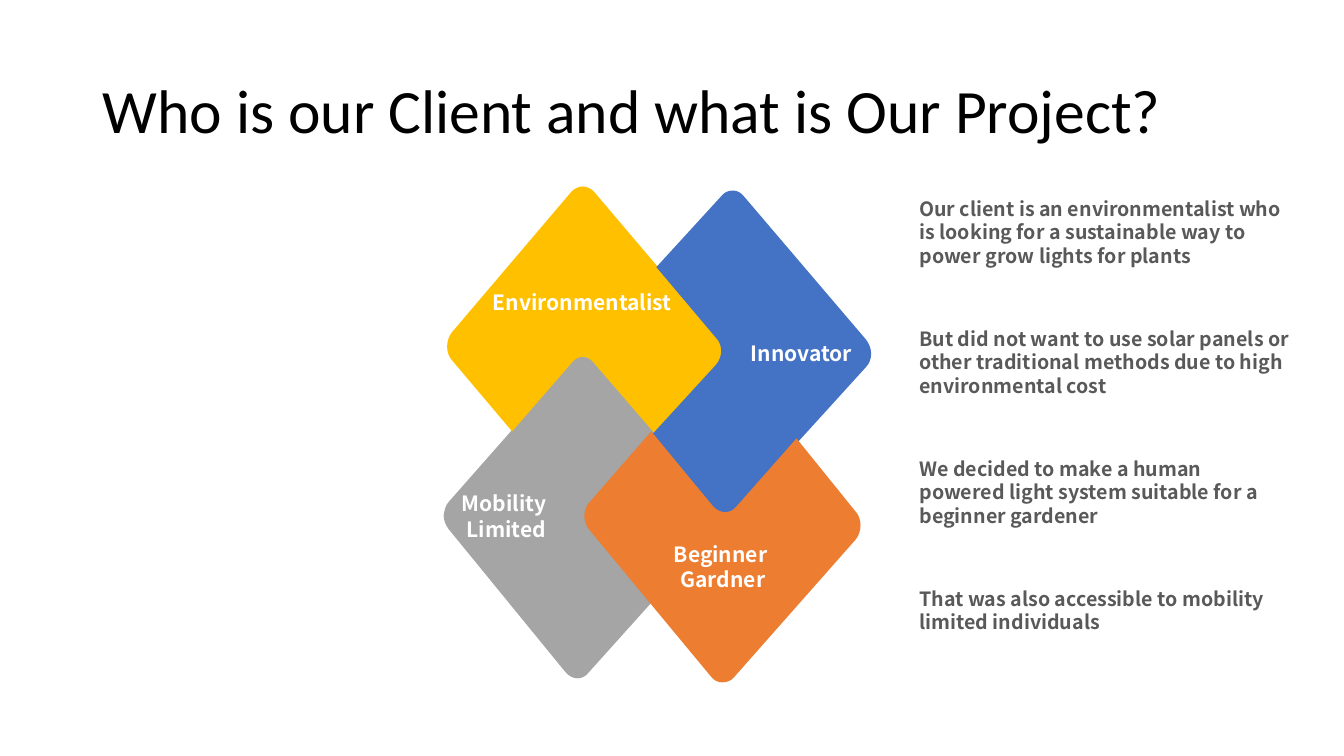
"""Builds a slide of four interlocking diamonds that describe the client and the project."""
from lxml.etree import SubElement
from pptx import Presentation
from pptx.dml.color import RGBColor
from pptx.enum.text import MSO_ANCHOR as Anchor, MSO_AUTO_SIZE as AutoSize, PP_ALIGN as Align
from pptx.oxml.ns import qn
from pptx.util import Inches, Pt

COLORS = {
    "title": "000000", "label": "FFFFFF", "caption": "595959",
    "gray": "A5A5A5", "gold": "FFC000", "blue": "4472C4", "orange": "ED7D31",
}
BODY_FONT = "Noto Sans CJK SC"
UNITS = 100


def write(frame, text, size, color, font=BODY_FONT, bold=True, align=Align.LEFT,
          anchor=Anchor.TOP, insets=(0.1, 0.05, 0.1, 0.05), spacing=None):
    frame.word_wrap = True
    frame.vertical_anchor = anchor
    frame.margin_left, frame.margin_top, frame.margin_right, frame.margin_bottom = map(Inches, insets)
    for index, line in enumerate(text.split("\n")):
        para = frame.paragraphs[0] if index == 0 else frame.add_paragraph()
        para.alignment = align
        para.line_spacing = spacing
        span = para.add_run()
        span.text = line
        span.font.name, span.font.size, span.font.bold = font, Pt(size), bold
        span.font.color.rgb = RGBColor.from_string(COLORS[color])


def draw_outline(bounds, steps):
    """Draw lines (x, y) and Bézier curves (x1, y1, x2, y2, x, y) within the bounds."""
    left, top, width, height = (round(length * UNITS) for length in bounds)
    right, bottom = left + width, top + height
    builder = page.shapes.build_freeform(left, top, scale=Inches(1) / UNITS)
    builder.add_line_segments([(right, top), (right, bottom), (left, bottom)])
    shape = builder.convert_to_shape()
    outline = shape._element.find(".//" + qn("a:path"))
    for child in list(outline):
        outline.remove(child)
    for index, step in enumerate(steps):
        tag = "a:moveTo" if index == 0 else "a:lnTo" if len(step) == 2 else "a:cubicBezTo"
        segment = SubElement(outline, qn(tag))
        for x, y in zip(step[::2], step[1::2]):
            SubElement(segment, qn("a:pt"), x=str(round(x * UNITS) - left), y=str(round(y * UNITS) - top))
    SubElement(outline, qn("a:close"))
    return shape


deck = Presentation()
deck.slide_width, deck.slide_height = Inches(13.33), Inches(7.5)
page = deck.slides.add_slide(deck.slide_layouts[6])

title = page.shapes.add_textbox(Inches(0.92), Inches(0.4), Inches(11.5), Inches(1.45))
write(title.text_frame, "Who is our Client and what is Our Project?", 44, "title",
      font="Calibri", bold=False, anchor=Anchor.MIDDLE, spacing=0.9)

diamonds = [
    ("Mobility\n Limited", "gray", Align.LEFT, (0.18, 0, 0, 0), (4.4, 3.51, 2.12, 3.22), [
        (5.81, 3.51), (5.86, 3.51, 5.9, 3.53, 5.93, 3.57), (6.52, 4.29), (5.89, 5.01),
        (5.82, 5.08, 5.82, 5.2, 5.88, 5.28), (6.46, 5.98), (5.84, 6.67),
        (5.78, 6.75, 5.68, 6.75, 5.61, 6.67), (4.45, 5.25),
        (4.42, 5.21, 4.4, 5.16, 4.4, 5.11), (4.41, 5.06, 4.42, 5.01, 4.45, 4.98),
        (5.7, 3.56), (5.73, 3.52, 5.77, 3.51, 5.81, 3.51)]),
    ("Environmentalist ", "gold", Align.CENTER, (0, 0, 0, 0.18), (4.43, 1.85, 2.74, 2.48), [
        (5.78, 1.85), (5.82, 1.85, 5.86, 1.87, 5.89, 1.9), (7.12, 3.35),
        (7.18, 3.42, 7.18, 3.54, 7.12, 3.62), (6.52, 4.33), (5.89, 3.6),
        (5.83, 3.52, 5.73, 3.52, 5.67, 3.6), (5.08, 4.28), (4.48, 3.57),
        (4.42, 3.5, 4.42, 3.38, 4.48, 3.3), (5.67, 1.9),
        (5.7, 1.87, 5.74, 1.85, 5.78, 1.85)]),
    ("Innovator", "blue", Align.RIGHT, (0, 0, 0.18, 0), (6.44, 1.89, 2.19, 3.22), [
        (7.27, 1.89), (7.31, 1.89, 7.35, 1.91, 7.38, 1.95), (8.59, 3.37),
        (8.62, 3.41, 8.64, 3.46, 8.64, 3.51), (8.64, 3.56, 8.62, 3.61, 8.59, 3.64),
        (7.3, 5.06), (7.23, 5.14, 7.12, 5.13, 7.06, 5.06), (6.44, 4.34), (7.1, 3.62),
        (7.17, 3.54, 7.17, 3.42, 7.1, 3.35), (6.51, 2.65), (7.15, 1.95),
        (7.18, 1.91, 7.22, 1.89, 7.27, 1.89)]),
    ("Beginner \nGardner", "orange", Align.CENTER, (0, 0.18, 0, 0), (5.8, 4.28, 2.74, 2.5), [
        (6.46, 4.28), (7.07, 5.02), (7.14, 5.1, 7.24, 5.1, 7.3, 5.03), (7.9, 4.35),
        (8.49, 5.08), (8.55, 5.15, 8.55, 5.27, 8.49, 5.35), (7.28, 6.72),
        (7.25, 6.76, 7.2, 6.77, 7.16, 6.77), (7.12, 6.77, 7.08, 6.75, 7.05, 6.71),
        (5.84, 5.25), (5.78, 5.17, 5.78, 5.05, 5.85, 4.98), (6.46, 4.28)]),
]
for label, color, align, insets, bounds, steps in diamonds:
    diamond = draw_outline(bounds, steps)
    diamond.shadow.inherit = False
    diamond.fill.solid()
    diamond.fill.fore_color.rgb = RGBColor.from_string(COLORS[color])
    diamond.line.fill.background()
    write(diamond.text_frame, label, 15, "label", align=align, anchor=Anchor.MIDDLE, insets=insets)

captions = [
    ("Our client is an environmentalist who is looking for a sustainable way to power grow lights for plants", 0.81),
    ("But did not want to use solar panels or other traditional methods due to high environmental cost", 0.81),
    ("We decided to make a human powered light system suitable for a beginner gardener", 0.81),
    ("That was also accessible to mobility limited individuals", 0.57),
]
for row, (text, height) in enumerate(captions):
    box = page.shapes.add_textbox(Inches(9.02), Inches(1.9 + 1.29 * row), Inches(3.88), Inches(height))
    write(box.text_frame, text, 14, "caption")
    box.text_frame.auto_size = AutoSize.SHAPE_TO_FIT_TEXT

deck.save("out.pptx")
